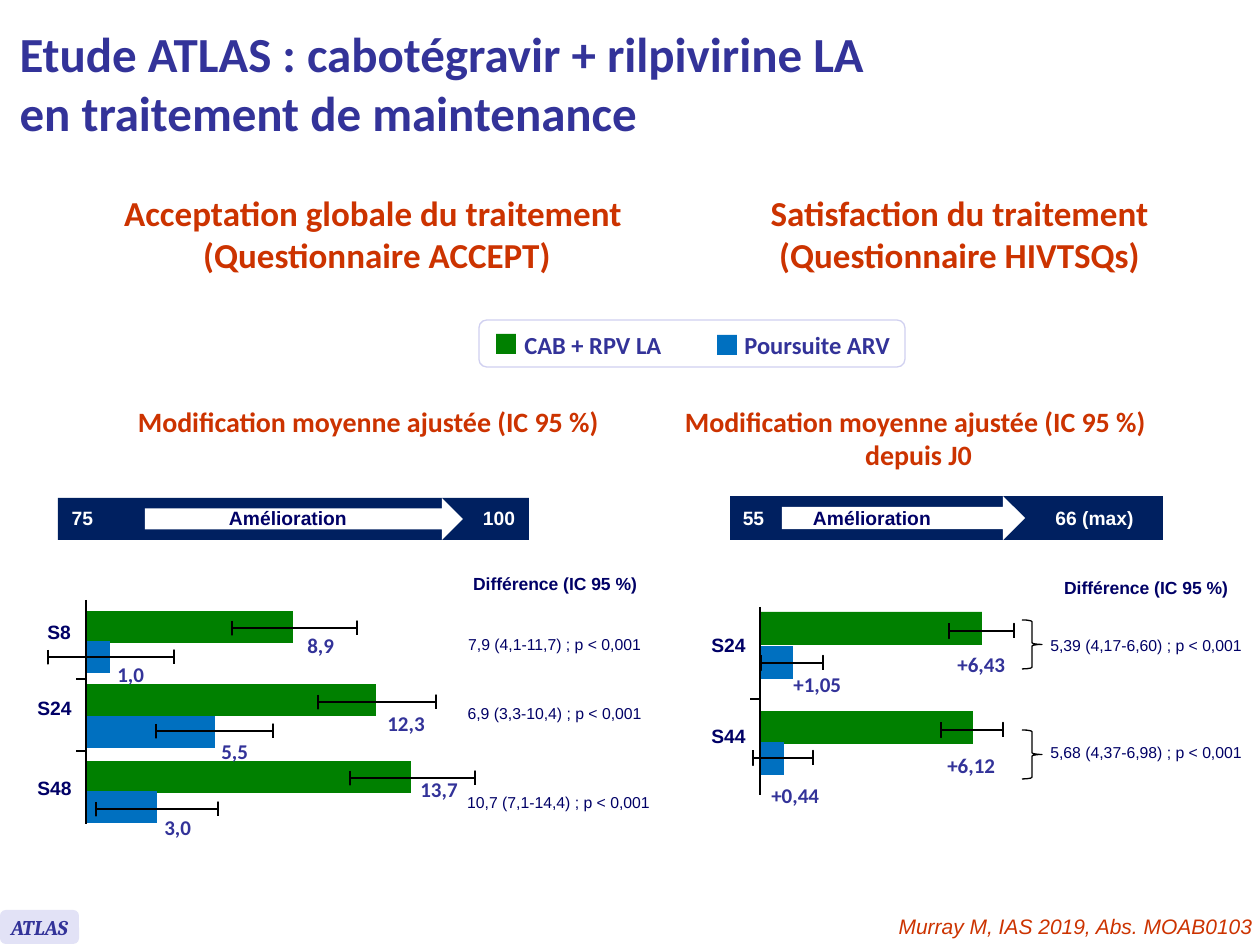
from lxml.etree import SubElement
from pptx import Presentation
from pptx.dml.color import RGBColor
from pptx.enum.shapes import MSO_CONNECTOR, MSO_SHAPE as SHAPE
from pptx.enum.text import MSO_ANCHOR as ANCHOR, MSO_AUTO_SIZE as AUTO, PP_ALIGN as ALIGN
from pptx.oxml.ns import qn
from pptx.util import Pt

PX = 914400 / 126
NAVY, INDIGO, RUST = "000066", "333399", "CC3300"
BANNER, WHITE, BLACK = "002060", "FFFFFF", "000000"
GREEN, BLUE = "008000", "0070C0"

TITLE = ["Etude ATLAS : cabotégravir + rilpivirine LA", "en traitement de maintenance"]
HEADINGS = [
    (["Acceptation globale du traitement ", "(Questionnaire ACCEPT)"], (50, 185, 654, 126), 20),
    (["Satisfaction du traitement", "(Questionnaire HIVTSQs)"], (678, 185, 563, 126), 20),
    (["Modification moyenne ajustée (IC 95 %) "], (122, 398, 499, 47), 16),
    (["Modification moyenne ajustée (IC 95 %) ", "depuis J0"], (669, 398, 499, 81), 16),
]
LEGEND = [("CAB + RPV LA", GREEN, 496, 334, 512), ("Poursuite ARV", BLUE, 717, 335, 732)]
DIFFERENCE = "Différence (IC 95 %)"
IMPROVEMENT = "Amélioration"

# series rows: value label, label left, label top, bar top, bar width, interval from, to, y
PANELS = [
    {
        "banner": (58, 498, 471, 42), "arrow": (145, 318), "improvement": 215,
        "ends": [("75", 59, 47), ("100", 470, 58)],
        "difference": (459, 567), "axis": (86, 600, 824), "ticks": [679, 751],
        "bar_height": 32, "cap": 14, "label_width": 63,
        "weeks": [("S8", 35, 614), ("S24", 25, 690), ("S48", 25, 770)],
        "green": [("8,9", 295, 626, 611, 207, 232, 357, 628),
                  ("12,3", 375, 704, 684, 290, 318, 436, 702),
                  ("13,7", 408, 770, 761, 325, 350, 475, 778)],
        "blue": [("1,0", 105, 655, 641, 24, 48, 174, 657),
                 ("5,5", 209, 732, 716, 129, 156, 273, 731),
                 ("3,0", 152, 808, 791, 71, 96, 218, 809)],
        "results": [("7,9 (4,1-11,7) ; p < 0,001", 451, 629, 207),
                    ("6,9 (3,3-10,4) ; p < 0,001", 451, 698, 207),
                    ("10,7 (7,1-14,4) ; p < 0,001", 451, 787, 215)],
        "braces": [],
    },
    {
        "banner": (730, 496, 433, 44), "arrow": (782, 243), "improvement": 799,
        "ends": [("55", 730, 47), ("66 (max)", 1042, 105)],
        "difference": (1050, 571), "axis": (760, 607, 795), "ticks": [699],
        "bar_height": 33, "cap": 15, "label_width": 74,
        "weeks": [("S24", 699, 627), ("S44", 699, 718)],
        "green": [("+6,43", 945, 645, 612, 222, 949, 1014, 631),
                  ("+6,12", 935, 746, 711, 213, 941, 1003, 730)],
        "blue": [("+1,05", 781, 665, 646, 33, 761, 823, 663),
                 ("+0,44", 759, 776, 742, 24, 753, 813, 758)],
        "results": [("5,39 (4,17-6,60) ; p < 0,001", 1037, 630, 218),
                    ("5,68 (4,37-6,98) ; p < 0,001", 1037, 737, 218)],
        "braces": [620, 730],
    },
]


def emu(*lengths):
    return [round(length * PX) for length in lengths]


def rgb(code):
    return RGBColor.from_string(code)


def write(frame, lines, size, color, font="Arial", align=ALIGN.LEFT, bold=True, italic=False):
    for index, line in enumerate(lines):
        paragraph = frame.add_paragraph() if index else frame.paragraphs[0]
        paragraph.alignment = align
        style(paragraph.add_run(), line, size, color, font, bold, italic)


def style(run, words, size, color, font, bold=True, italic=False):
    run.text = words
    run.font.size, run.font.name = Pt(size), font
    run.font.bold, run.font.italic = bold, italic
    run.font.color.rgb = rgb(color)


def text(slide, lines, box, size, color, wrap=False, **look):
    frame = slide.shapes.add_textbox(*emu(*box)).text_frame
    frame.word_wrap = wrap
    write(frame, lines, size, color, **look)


def paint(shape, fill=None, line=None):
    shape.shadow.inherit = False
    if fill:
        shape.fill.solid()
        shape.fill.fore_color.rgb = rgb(fill)
    else:
        shape.fill.background()
    if line:
        shape.line.color.rgb = rgb(line)
        shape.line.width = Pt(0.75)
    else:
        shape.line.fill.background()
    return shape


def block(slide, kind, box, fill=None, line=None):
    return paint(slide.shapes.add_shape(kind, *emu(*box)), fill, line)


def rule(slide, *ends):
    connector = slide.shapes.add_connector(MSO_CONNECTOR.STRAIGHT, *emu(*ends))
    connector.line.color.rgb = rgb(BLACK)
    connector.line.width = Pt(0.75)
    SubElement(connector._element.spPr, qn("a:effectLst"))


def interval(slide, low, high, y, cap):
    top, bottom = y - cap / 2, y + cap / 2
    builder = slide.shapes.build_freeform(*emu(low, top), scale=1.0)
    corners = [(low, bottom), (low, y), (high, y), (high, top), (high, bottom)]
    builder.add_line_segments([emu(*corner) for corner in corners], close=False)
    paint(builder.convert_to_shape(), line=BLACK)


def draw_banner(slide, panel):
    left, top, width, height = panel["banner"]
    arrow_left, arrow_width = panel["arrow"]
    block(slide, SHAPE.RECTANGLE, panel["banner"], BANNER)
    block(slide, SHAPE.RIGHT_ARROW, (arrow_left, top, arrow_width, height), WHITE)
    for words, x, span in panel["ends"]:
        text(slide, [words], (x, 500, span, 37), 11, WHITE, align=ALIGN.CENTER)
    text(slide, [IMPROVEMENT], (panel["improvement"], 500, 146, 37), 11, NAVY, align=ALIGN.CENTER)


def draw_bars(slide, panel):
    axis, top, bottom = panel["axis"]
    for color, series in ((GREEN, panel["green"]), (BLUE, panel["blue"])):
        for value, x, y, bar_top, width, low, high, middle in series:
            block(slide, SHAPE.RECTANGLE, (axis, bar_top, width, panel["bar_height"]), color)
            interval(slide, low, high, middle, panel["cap"])
            text(slide, [value], (x, y, panel["label_width"], 38), 12, INDIGO, font="Calibri")
    rule(slide, axis, top, axis, bottom)
    for y in panel["ticks"]:
        rule(slide, axis, y, axis - 10, y)
    for week, x, y in panel["weeks"]:
        text(slide, [week], (x, y, 60, 37), 11, NAVY)


def draw_results(slide, panel):
    text(slide, [DIFFERENCE], (*panel["difference"], 192, 34), 10, NAVY, align=ALIGN.CENTER)
    for result, x, y, width in panel["results"]:
        text(slide, [result], (x, y, width, 32), 9, NAVY, align=ALIGN.CENTER, bold=False)
    for y in panel["braces"]:
        block(slide, SHAPE.RIGHT_BRACE, (1022, y, 20, 49), line=BLACK)


def main():
    deck = Presentation()
    deck.slide_width, deck.slide_height = emu(1260, 945)
    slide = deck.slides.add_slide(deck.slide_layouts[5])

    title = slide.shapes.title
    title.left, title.top, title.width, title.height = emu(7, 6, 1249, 152)
    frame = title.text_frame
    frame.auto_size, frame.vertical_anchor, frame.word_wrap = AUTO.NONE, ANCHOR.MIDDLE, True
    heading = frame.paragraphs[0]
    heading.alignment = ALIGN.LEFT
    for index, line in enumerate(TITLE):
        if index:
            heading.add_line_break()
        style(heading.add_run(), line, 28, INDIGO, "Calibri")

    for lines, box, size in HEADINGS:
        text(slide, lines, box, size, RUST, wrap=size == 20, font="Calibri", align=ALIGN.CENTER)

    block(slide, SHAPE.ROUNDED_RECTANGLE, (479, 320, 426, 47), WHITE, "D0D0F0")
    for label, color, x, y, label_left in LEGEND:
        block(slide, SHAPE.RECTANGLE, (x, y, 20, 20), color)
        text(slide, [label], (label_left, 324, 185, 43), 14, INDIGO, font="Calibri")

    for panel in PANELS:
        draw_banner(slide, panel)
        draw_bars(slide, panel)
        draw_results(slide, panel)

    tag = block(slide, SHAPE.ROUNDED_RECTANGLE, (0, 910, 79, 34), "E2E2F6")
    tag.text_frame.word_wrap = False
    tag.text_frame.vertical_anchor = ANCHOR.MIDDLE
    write(tag.text_frame, ["ATLAS"], 12, INDIGO, "Cambria", ALIGN.CENTER, italic=True)
    text(slide, ["Murray M, IAS 2019, Abs. MOAB0103"], (266, 907, 999, 38), 12, RUST,
         wrap=True, align=ALIGN.RIGHT, bold=False, italic=True)
    deck.save("out.pptx")


if __name__ == "__main__":
    main()
